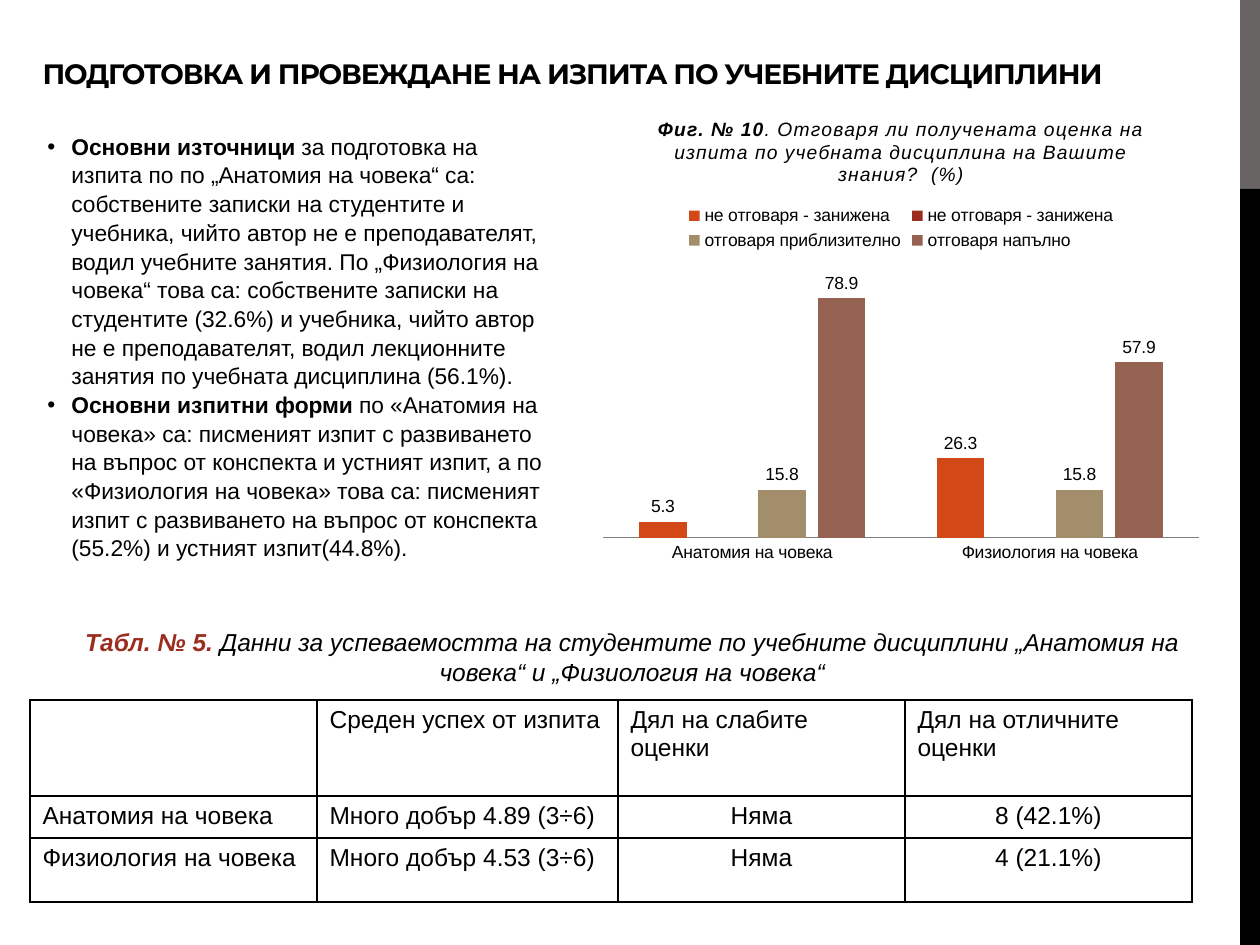
from lxml import etree
from pptx import Presentation
from pptx.chart.data import CategoryChartData
from pptx.dml.color import RGBColor
from pptx.enum.chart import XL_CHART_TYPE, XL_LABEL_POSITION, XL_LEGEND_POSITION, XL_TICK_MARK
from pptx.enum.shapes import MSO_SHAPE
from pptx.enum.text import MSO_ANCHOR, PP_ALIGN
from pptx.oxml.ns import qn
from pptx.util import Emu, Pt

COLUMN = XL_CHART_TYPE.COLUMN_CLUSTERED
OUTSIDE = XL_LABEL_POSITION.OUTSIDE_END
TOP_LEGEND = XL_LEGEND_POSITION.TOP
NO_TICK = XL_TICK_MARK.NONE
RECT = MSO_SHAPE.RECTANGLE
BOTTOM = MSO_ANCHOR.BOTTOM
LEFT, CENTER = PP_ALIGN.LEFT, PP_ALIGN.CENTER

COLORS = {"black": "000000", "gray": "696464", "axis": "808080", "red": "9B2D1F",
          "orange": "D34817", "tan": "A28E6A", "brown": "956251"}

TITLE = "ПОДГОТОВКА И ПРОВЕЖДАНЕ НА ИЗПИТА ПО УЧЕБНИТЕ ДИСЦИПЛИНИ"
BULLETS = [
    ("Основни източници",
     " за подготовка на изпита по по „Анатомия на човека“ са: собствените записки на "
     "студентите и учебника, чийто автор не е преподавателят, водил учебните занятия. "
     "По „Физиология на човека“ това са: собствените записки на студентите (32.6%) и "
     "учебника, чийто автор не е преподавателят, водил лекционните занятия по учебната "
     "дисциплина (56.1%)."),
    ("Основни изпитни форми ",
     "по «Анатомия на човека» са: писменият изпит с развиването на въпрос от конспекта "
     "и устният изпит, а по «Физиология на човека» това са: писменият изпит с "
     "развиването на въпрос от конспекта (55.2%) и устният изпит(44.8%)."),
]
CAPTION = ("Табл. № 5. ", "Данни за успеваемостта на студентите по учебните дисциплини "
           "„Анатомия на човека“ и „Физиология на човека“")
CHART_TITLE = ("Фиг. № 10", ". Отговаря ли получената оценка на изпита по учебната "
               "дисциплина на Вашите знания?  (%)")
SUBJECTS = ["Анатомия на човека", "Физиология на човека"]
SERIES = [
    ("не отговаря - занижена", (5.3, 26.3), "orange"),
    ("не отговаря - занижена", (None, None), "red"),
    ("отговаря приблизително", (15.8, 15.8), "tan"),
    ("отговаря напълно", (78.9, 57.9), "brown"),
]
ROWS = [
    ["", "Среден успех от изпита", "Дял на слабите оценки", "Дял на отличните оценки"],
    [SUBJECTS[0], "Много добър 4.89 (3÷6)", "Няма", "8 (42.1%)"],
    [SUBJECTS[1], "Много добър 4.53 (3÷6)", "Няма", "4 (21.1%)"],
]
COL_WIDTHS = [287, 301, 287, 287]
ROW_HEIGHTS = [96, 41, 64]


def px(n):
    return Emu(round(n * 914400 / 126))


def box(*lengths):
    return [px(n) for n in lengths]


def rgb(name):
    return RGBColor.from_string(COLORS[name])


def style(font, size, color="black", bold=False, italic=False, name="Arial"):
    font.name, font.size, font.bold, font.italic = name, Pt(size), bold, italic
    font.color.rgb = rgb(color)


def add_run(p, text, size, **look):
    r = p.add_run()
    r.text = text
    style(r.font, size, **look)
    return r


def set_spacing(r, hundredths):
    r._r.get_or_add_rPr().set("spc", str(hundredths))


def add_bar(slide, color, *at):
    sp = slide.shapes.add_shape(RECT, *box(*at))
    sp.shadow.inherit = False
    sp.fill.solid()
    sp.fill.fore_color.rgb = rgb(color)
    sp.line.fill.background()


def set_title(slide):
    sp = slide.shapes.title
    sp.left, sp.top, sp.width, sp.height = box(30, 37, 1211, 59)
    tf = sp.text_frame
    tf.vertical_anchor = BOTTOM
    p = tf.paragraphs[0]
    p.alignment = LEFT
    r = add_run(p, TITLE, 16, bold=True, name="Montserrat")
    set_spacing(r, -60)


def add_text_box(slide, *at):
    tf = slide.shapes.add_textbox(*box(*at)).text_frame
    tf.word_wrap = True
    return tf


def add_bullets(slide):
    tf = add_text_box(slide, 35, 125, 525, 446)
    for i, (lead, rest) in enumerate(BULLETS):
        p = tf.add_paragraph() if i else tf.paragraphs[0]
        pPr = p._p.get_or_add_pPr()
        pPr.set("marL", str(px(24)))
        pPr.set("indent", str(-px(24)))
        etree.SubElement(pPr, qn("a:buFont")).set("typeface", "Arial")
        etree.SubElement(pPr, qn("a:buChar")).set("char", "•")
        p.line_spacing = 1.05
        add_run(p, lead, 13, bold=True)
        add_run(p, rest, 13)


def add_caption(slide):
    p = add_text_box(slide, 72, 621, 1121, 72).paragraphs[0]
    p.alignment = CENTER
    add_run(p, CAPTION[0], 14, color="red", bold=True, italic=True)
    add_run(p, CAPTION[1], 14, italic=True)


def set_borders(cell):
    tcPr = cell._tc.get_or_add_tcPr()
    for i, side in enumerate(("lnL", "lnR", "lnT", "lnB")):
        ln = etree.Element(qn(f"a:{side}"), w=str(Pt(1)))
        fill = etree.SubElement(ln, qn("a:solidFill"))
        etree.SubElement(fill, qn("a:srgbClr")).set("val", COLORS["black"])
        tcPr.insert(i, ln)


def add_results_table(slide):
    at = box(30, 700, sum(COL_WIDTHS), sum(ROW_HEIGHTS))
    table = slide.shapes.add_table(len(ROWS), len(COL_WIDTHS), *at).table
    for col, width in zip(table.columns, COL_WIDTHS):
        col.width = px(width)
    for i, (texts, height) in enumerate(zip(ROWS, ROW_HEIGHTS)):
        table.rows[i].height = px(height)
        for j, text in enumerate(texts):
            cell = table.cell(i, j)
            cell.fill.background()
            set_borders(cell)
            p = cell.text_frame.paragraphs[0]
            p.alignment = CENTER if i and j > 1 else LEFT
            if text:
                add_run(p, text, 14)


def add_grade_chart(slide):
    data = CategoryChartData(number_format="0.0")
    data.categories = SUBJECTS
    for name, values, _ in SERIES:
        data.add_series(name, values)
    chart = slide.shapes.add_chart(COLUMN, *box(591, 96, 620, 476), data).chart
    style(chart.font, 10)

    p = chart.chart_title.text_frame.paragraphs[0]
    for text, bold in zip(CHART_TITLE, (True, False)):
        set_spacing(add_run(p, text, 11, bold=bold, italic=True), 50)
    chart.chart_title.include_in_layout = False
    chart.has_legend = True
    chart.legend.position = TOP_LEGEND
    chart.legend.include_in_layout = False

    chart.value_axis.visible = False
    chart.value_axis.has_major_gridlines = False
    chart.value_axis.minimum_scale = 0
    axis = chart.category_axis
    axis.major_tick_mark = NO_TICK
    axis.format.line.color.rgb = rgb("axis")

    plot = chart.plots[0]
    plot.vary_by_categories = False
    plot.gap_width, plot.overlap = 150, -25
    for series, (_, _, color) in zip(plot.series, SERIES):
        series.format.fill.solid()
        series.format.fill.fore_color.rgb = rgb(color)
        labels = series.data_labels
        labels.show_value = True
        labels.position = OUTSIDE
        labels.number_format, labels.number_format_is_linked = "0.0", False


def main():
    prs = Presentation()
    prs.slide_width, prs.slide_height = box(1260, 945)
    slide = prs.slides.add_slide(prs.slide_layouts[5])
    add_bar(slide, "gray", 1240, 0, 20, 189)
    add_bar(slide, "black", 1240, 189, 20, 756)
    set_title(slide)
    add_bullets(slide)
    add_results_table(slide)
    add_caption(slide)
    add_grade_chart(slide)
    prs.save("out.pptx")


if __name__ == "__main__":
    main()
